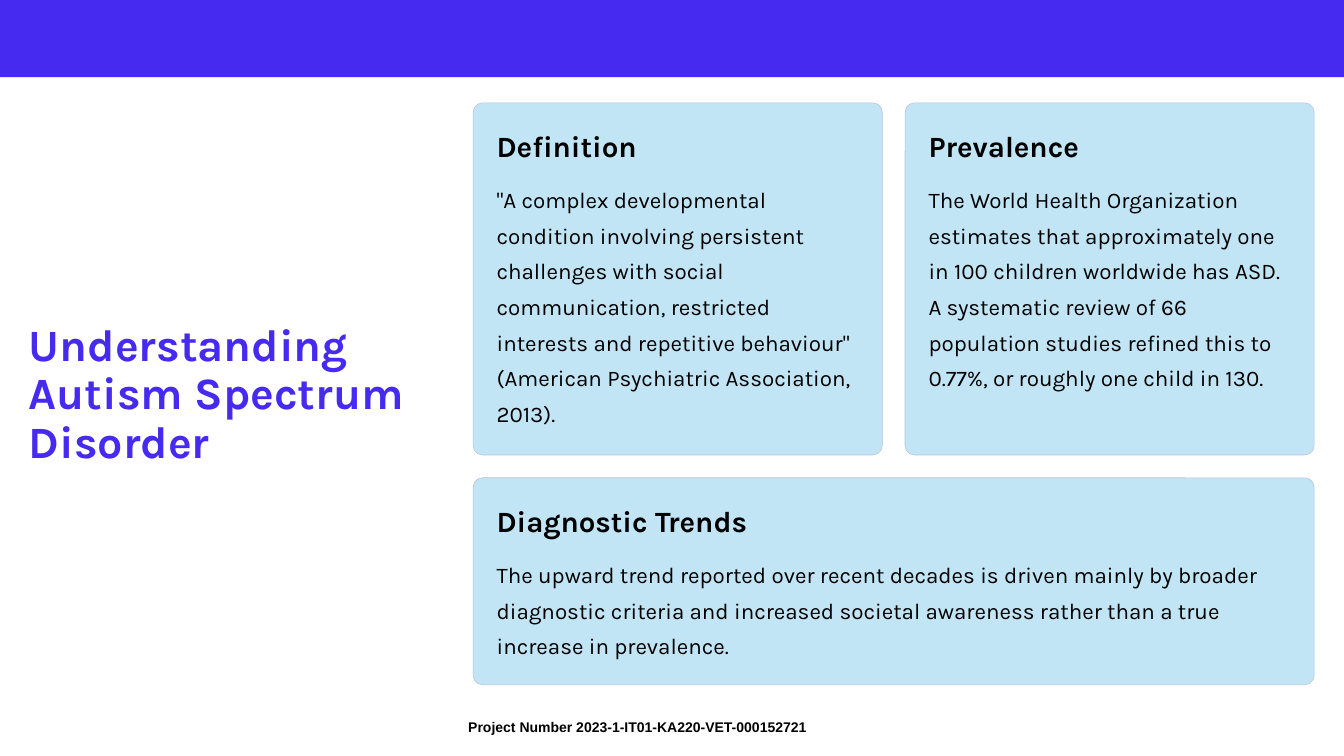
import pptx
import pptx.dml.color
import pptx.enum.shapes
import pptx.enum.text
import pptx.util

Pt = pptx.util.Pt
MSO_SHAPE = pptx.enum.shapes.MSO_SHAPE
MSO_ANCHOR = pptx.enum.text.MSO_ANCHOR

COLORS = {
    "violet": "462AF0",
    "card": "C1E5F5",
    "card_line": "BBC2DC",
    "text": "000000",
}


def rgb(name):
    return pptx.dml.color.RGBColor.from_string(COLORS[name])


def add_text(text, left, top, width, height, size, spacing, color="text",
             bold=False, font="Karla", inset=(0, 0), anchor=MSO_ANCHOR.TOP):
    """Add a wrapped text box; inset is (horizontal, vertical) in points."""
    box = slide.shapes.add_textbox(Pt(left), Pt(top), Pt(width), Pt(height))
    frame = box.text_frame
    frame.word_wrap = True
    frame.vertical_anchor = anchor
    frame.margin_left = frame.margin_right = Pt(inset[0])
    frame.margin_top = frame.margin_bottom = Pt(inset[1])
    paragraph = frame.paragraphs[0]
    paragraph.text = text
    paragraph.line_spacing = spacing
    paragraph.font.name = font
    paragraph.font.size = Pt(size)
    paragraph.font.bold = bold
    paragraph.font.color.rgb = rgb(color)


presentation = pptx.Presentation()
presentation.slide_width = Pt(1440)
presentation.slide_height = Pt(810)
slide = presentation.slides.add_slide(presentation.slide_layouts[6])

# Footer, top band and title
add_text("Project Number 2023-1-IT01-KA220-VET-000152721",
         494.6, 766.8, 382.3, 25.2, 15, 1.0, bold=True, font="Arial",
         inset=(7.2, 3.6))

band = slide.shapes.add_shape(MSO_SHAPE.RECTANGLE, Pt(0), Pt(-1.4), Pt(1440), Pt(84.2))
band.shadow.inherit = False
band.fill.solid()
band.fill.fore_color.rgb = rgb("violet")
band.line.fill.background()

add_text("Understanding Autism Spectrum Disorder",
         23.8, 345.6, 446.4, 156.2, 48, 0.9, color="violet", bold=True,
         inset=(7.2, 3.6), anchor=MSO_ANCHOR.MIDDLE)

# Cards: two side by side, one across below them
LEFT, TOP, GAP = 506.9, 110.2, 24.4
CARD_WIDTH, UPPER_HEIGHT, LOWER_HEIGHT = 438.4, 377.3, 221.8
PADDING, BODY_OFFSET, CORNER = 25.2, 79.9, 10.2

right_left = LEFT + CARD_WIDTH + GAP
lower_top = TOP + UPPER_HEIGHT + GAP
full_width = 2 * CARD_WIDTH + GAP

cards = [
    (LEFT, TOP, CARD_WIDTH, UPPER_HEIGHT, "Definition",
     '"A complex developmental condition involving persistent challenges with '
     'social communication, restricted interests and repetitive behaviour" '
     "(American Psychiatric Association, 2013)."),
    (right_left, TOP, CARD_WIDTH, UPPER_HEIGHT, "Prevalence",
     "The World Health Organization estimates that approximately one in 100 "
     "children worldwide has ASD. A systematic review of 66 population studies "
     "refined this to 0.77%, or roughly one child in 130."),
    (LEFT, lower_top, full_width, LOWER_HEIGHT, "Diagnostic Trends",
     "The upward trend reported over recent decades is driven mainly by broader "
     "diagnostic criteria and increased societal awareness rather than a true "
     "increase in prevalence."),
]

for left, top, width, height, heading, body in cards:
    card = slide.shapes.add_shape(MSO_SHAPE.ROUNDED_RECTANGLE,
                                  Pt(left), Pt(top), Pt(width), Pt(height))
    card.adjustments[0] = CORNER / height
    card.shadow.inherit = False
    card.fill.solid()
    card.fill.fore_color.rgb = rgb("card")
    card.line.color.rgb = rgb("card_line")
    card.line.width = Pt(0.6)

    text_left = left + PADDING
    add_text(heading, text_left, top + PADDING, 319.7, 40.3,
             31.5, Pt(39.8), bold=True)
    add_text(body, text_left, top + BODY_OFFSET, width - 2 * PADDING,
             height - BODY_OFFSET - PADDING, 24, Pt(38.2))

presentation.save("out.pptx")
